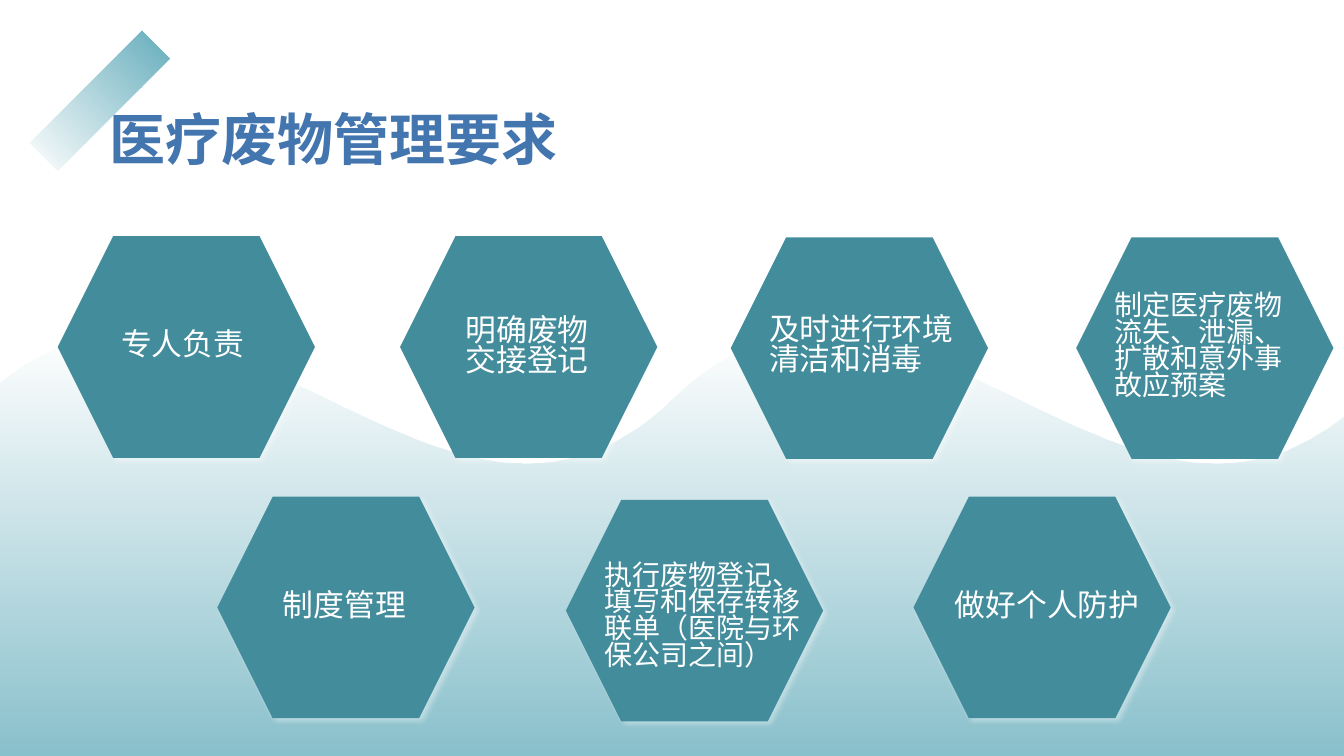
from dataclasses import dataclass

from pptx import Presentation
from pptx import util as u
from pptx.dml.color import RGBColor
from pptx.enum import shapes, text
from pptx.oxml import parse_xml
from pptx.oxml.ns import nsdecls, qn

EMU_PER_PX = 9525


@dataclass(frozen=True)
class Theme:
    font: str = "Noto Sans CJK SC"
    title: str = "4375AF"
    hexagon: str = "438C9B"
    accent: str = "64ADBC"
    white: str = "FFFFFF"
    title_size: int = 40
    label_size: int = 22
    small_size: int = 20


@dataclass(frozen=True)
class Box:
    left: int
    top: int
    width: int
    height: int

    def emu(self) -> tuple:
        return tuple(u.Emu(value * EMU_PER_PX) for value in
                     (self.left, self.top, self.width, self.height))


@dataclass(frozen=True)
class Requirement:
    wording: str
    left: int
    top: int
    label: Box
    size: int = Theme.label_size
    wrap: bool = True


THEME = Theme()
HEXAGON_WIDTH, HEXAGON_HEIGHT = 245, 211
REQUIREMENTS = (
    # Upper row
    Requirement("专人负责", 55, 225, Box(106, 311, 138, 39), wrap=False),
    Requirement("明确废物交接登记", 381, 225, Box(434, 298, 158, 67)),
    Requirement("及时进行环境清洁和消毒", 696, 226, Box(723, 297, 215, 67)),
    Requirement("制定医疗废物流失、泄漏、扩散和意外事故应预案", 1025, 226,
                Box(1052, 275, 186, 113), THEME.small_size),
    # Lower row
    Requirement("制度管理", 207, 473, Box(260, 560, 138, 39), wrap=False),
    Requirement("执行废物登记、填写和保存转移联单（医院与环保公司之间）", 539, 476,
                Box(566, 532, 227, 113), THEME.small_size),
    Requirement("做好个人防护", 870, 473, Box(900, 560, 213, 39)),
)


def add_plain_shape(slide, kind, box: Box):
    """Add a preset shape without outline or shadow."""
    shape = slide.shapes.add_shape(kind, *box.emu())
    shape.line.fill.background()
    shape.shadow.inherit = False
    return shape


def fade(shape, start_alpha: int, end_alpha: int, angle: int) -> None:
    """Fill with the accent colour, fading between two opacities in percent."""
    stops = "".join(
        f'<a:gs pos="{position}"><a:srgbClr val="{THEME.accent}">'
        f'<a:alpha val="{alpha * 1000}"/></a:srgbClr></a:gs>'
        for position, alpha in ((0, start_alpha), (100000, end_alpha)))
    gradient = parse_xml(
        f'<a:gradFill {nsdecls("a")} rotWithShape="1"><a:gsLst>{stops}</a:gsLst>'
        f'<a:lin ang="{angle * 60000}" scaled="0"/></a:gradFill>')
    shape._element.spPr.find(qn("a:prstGeom")).addnext(gradient)


def format_paragraph(paragraph, size: int, colour: str, spacing: float,
                     bold: bool = False) -> None:
    paragraph.alignment = text.PP_ALIGN.LEFT
    paragraph.line_spacing = spacing
    font = paragraph.font
    font.size, font.bold, font.name = u.Pt(size), bold, THEME.font
    font.color.rgb = RGBColor.from_string(colour)
    # East Asian typeface
    properties = paragraph._p.get_or_add_pPr().find(qn("a:defRPr"))
    properties.append(parse_xml(
        f'<a:ea {nsdecls("a")} typeface="{THEME.font}"/>'))


def add_hexagon(slide, requirement: Requirement) -> None:
    box = Box(requirement.left, requirement.top, HEXAGON_WIDTH, HEXAGON_HEIGHT)
    shape = add_plain_shape(slide, shapes.MSO_SHAPE.HEXAGON, box)
    shape.fill.solid()
    shape.fill.fore_color.rgb = RGBColor.from_string(THEME.hexagon)
    # Soft white shadow to the lower right
    shape._element.spPr.find(qn("a:effectLst")).append(parse_xml(
        f'<a:outerShdw {nsdecls("a")} blurRad="{u.Pt(4)}" dist="{u.Pt(3)}" '
        f'dir="{45 * 60000}" algn="tl" rotWithShape="0">'
        f'<a:srgbClr val="{THEME.white}"><a:alpha val="40000"/></a:srgbClr>'
        '</a:outerShdw>'))


def add_label(slide, requirement: Requirement) -> None:
    frame = slide.shapes.add_textbox(*requirement.label.emu()).text_frame
    frame.word_wrap = requirement.wrap
    frame.auto_size = text.MSO_AUTO_SIZE.SHAPE_TO_FIT_TEXT
    paragraph = frame.paragraphs[0]
    paragraph.text = requirement.wording
    paragraph.space_before = u.Pt(10)
    format_paragraph(paragraph, requirement.size, THEME.white, 0.8)


def add_title(slide, wording: str, box: Box) -> None:
    title = slide.shapes.title
    title.left, title.top, title.width, title.height = box.emu()
    frame = title.text_frame
    frame.text = wording
    frame.word_wrap = True
    frame.auto_size = text.MSO_AUTO_SIZE.NONE
    frame.vertical_anchor = text.MSO_ANCHOR.MIDDLE
    format_paragraph(frame.paragraphs[0], THEME.title_size, THEME.title, 0.9,
                     bold=True)


def main() -> None:
    presentation = Presentation()
    presentation.slide_width = u.Emu(1280 * EMU_PER_PX)
    presentation.slide_height = u.Emu(720 * EMU_PER_PX)
    slide = presentation.slides.add_slide(presentation.slide_layouts[5])

    # Wave behind everything, the title included
    wave = add_plain_shape(slide, shapes.MSO_SHAPE.DOUBLE_WAVE,
                           Box(-17, 316, 1315, 532))
    wave.adjustments[0], wave.adjustments[1] = 0.12, 0
    fade(wave, 100, 0, 270)
    slide.shapes._spTree.insert(2, wave._element)

    add_title(slide, "医疗废物管理要求", Box(95, 96, 676, 80))

    # Hexagons, then their labels
    for requirement in REQUIREMENTS:
        add_hexagon(slide, requirement)
    for requirement in REQUIREMENTS:
        add_label(slide, requirement)

    # Slanted ribbon beside the title
    ribbon = add_plain_shape(slide, shapes.MSO_SHAPE.RECTANGLE,
                             Box(19, 77, 151, 38))
    ribbon.rotation = 315
    fade(ribbon, 0, 100, 0)

    presentation.save("out.pptx")


if __name__ == "__main__":
    main()
